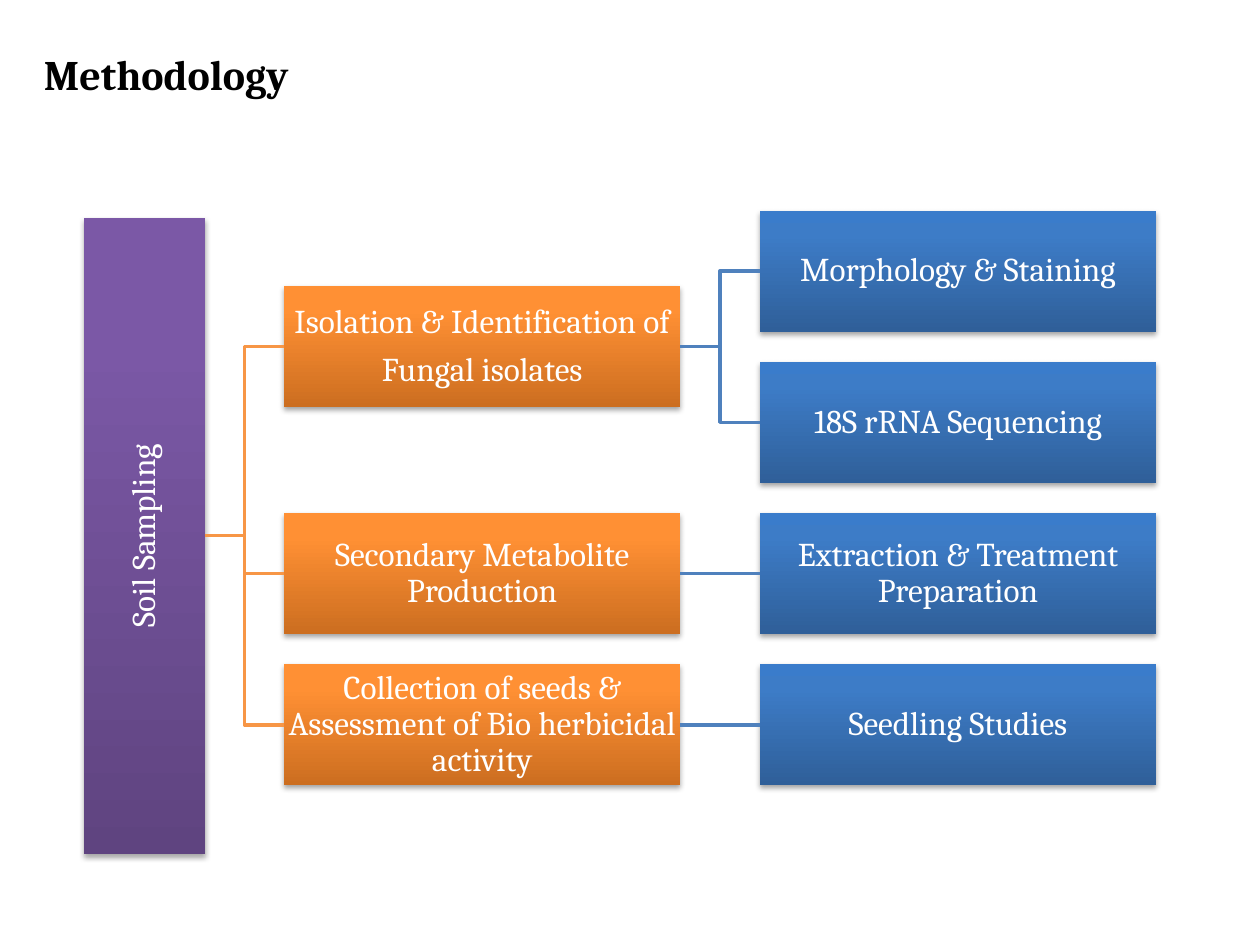
from lxml import etree
from pptx import Presentation
from pptx.dml.color import RGBColor
from pptx.enum.shapes import MSO_CONNECTOR as Conn, MSO_SHAPE as Kind
from pptx.enum.text import MSO_ANCHOR as Anchor, PP_ALIGN as Align
from pptx.oxml import parse_xml
from pptx.oxml.ns import nsdecls, qn
from pptx.util import Pt

PURPLE = ("5F4480", "7B58A6", "7C57A8")
ORANGE = ("CC6E20", "FF9034", "FF9136")
BLUE = ("2F5F99", "3D7CC7", "3A7CCB")

BOX_W, BOX_H = 226.3, 69.1
MID_X, END_X = 162.4, 434.3
TOP, STEP = 120.4, 86.4


def color(text):
    return RGBColor.from_string(text)


def row(num):
    return TOP + num * STEP


class Chart:
    """Holds the style and the slide of a box-and-line diagram."""

    font = "Cambria"

    def __init__(self, slide):
        self.slide = slide

    def style(self, para, size, ink, bold=False):
        para.font.name = self.font
        para.font.size = Pt(size)
        para.font.bold = bold
        para.font.color.rgb = color(ink)

    def title(self, text, x, y, w, h):
        frame = self.slide.shapes.add_textbox(Pt(x), Pt(y), Pt(w), Pt(h)).text_frame
        frame.word_wrap = True
        frame.text = text
        self.style(frame.paragraphs[0], 24, "000000", True)

    def shade(self, shape, tones):
        """Fill upward from the dark tone and drop a soft shadow below."""
        stops = "".join(
            f'<a:gs pos="{pos}"><a:srgbClr val="{tone}"/></a:gs>'
            for pos, tone in zip((0, 80000, 100000), tones))
        fill = parse_xml(
            f'<a:gradFill {nsdecls("a")} rotWithShape="1"><a:gsLst>{stops}</a:gsLst>'
            '<a:lin ang="16200000" scaled="0"/></a:gradFill>')
        shadow = parse_xml(
            f'<a:effectLst {nsdecls("a")}><a:outerShdw blurRad="{Pt(3.1)}" '
            f'dist="{Pt(1.8)}" dir="5400000" rotWithShape="0"><a:srgbClr val="000000">'
            '<a:alpha val="35000"/></a:srgbClr></a:outerShdw></a:effectLst>')
        props = shape.element.spPr
        props.find(qn("a:prstGeom")).addnext(fill)
        props.append(shadow)

    def box(self, text, x, y, tones, w=BOX_W, h=BOX_H, upright=False):
        shape = self.slide.shapes.add_shape(Kind.RECTANGLE, Pt(x), Pt(y), Pt(w), Pt(h))
        shape.line.fill.background()
        self.shade(shape, tones)
        frame = shape.text_frame
        frame.word_wrap = True
        frame.vertical_anchor = Anchor.MIDDLE
        frame.margin_left = frame.margin_right = Pt(0.9)
        frame.margin_top = frame.margin_bottom = Pt(0.9)
        if upright:
            shape.element.txBody.find(qn("a:bodyPr")).set("vert", "vert270")
        frame.text = text
        for para in frame.paragraphs:
            para.alignment = Align.CENTER
            para.line_spacing = 0.9
            para.space_after = Pt(7)
            self.style(para, 19, "FFFFFF")
        return shape

    def link(self, start, end, ink):
        """Join the right side of one box to the left side of the next."""
        level = start.top + start.height // 2 == end.top + end.height // 2
        kind = Conn.STRAIGHT if level else Conn.ELBOW
        line = self.slide.shapes.add_connector(kind, 0, 0, 0, 0)
        line.begin_connect(start, 3)
        line.end_connect(end, 1)
        line.line.color.rgb = color(ink)
        line.line.width = Pt(2)
        etree.SubElement(line.element.spPr, qn("a:effectLst"))


def main():
    deck = Presentation()
    deck.slide_width, deck.slide_height = Pt(720), Pt(540)
    chart = Chart(deck.slides.add_slide(deck.slide_layouts[6]))
    chart.title("Methodology", 18, 24, 516, 72)

    root = chart.box("Soil Sampling", 48, 124.4, PURPLE, BOX_H, 363.4, True)
    steps = [
        ("Isolation & Identification of\nFungal isolates", 0.5,
         [("Morphology & Staining", 0), ("18S rRNA Sequencing", 1)]),
        ("Secondary Metabolite Production", 2,
         [("Extraction & Treatment Preparation", 2)]),
        ("Collection of seeds & Assessment of Bio herbicidal activity", 3,
         [("Seedling Studies", 3)]),
    ]
    for text, num, tasks in steps:
        step = chart.box(text, MID_X, row(num), ORANGE)
        chart.link(root, step, "F79646")
        for name, place in tasks:
            task = chart.box(name, END_X, row(place), BLUE)
            chart.link(step, task, "4F81BD")

    deck.save("out.pptx")


if __name__ == "__main__":
    main()
